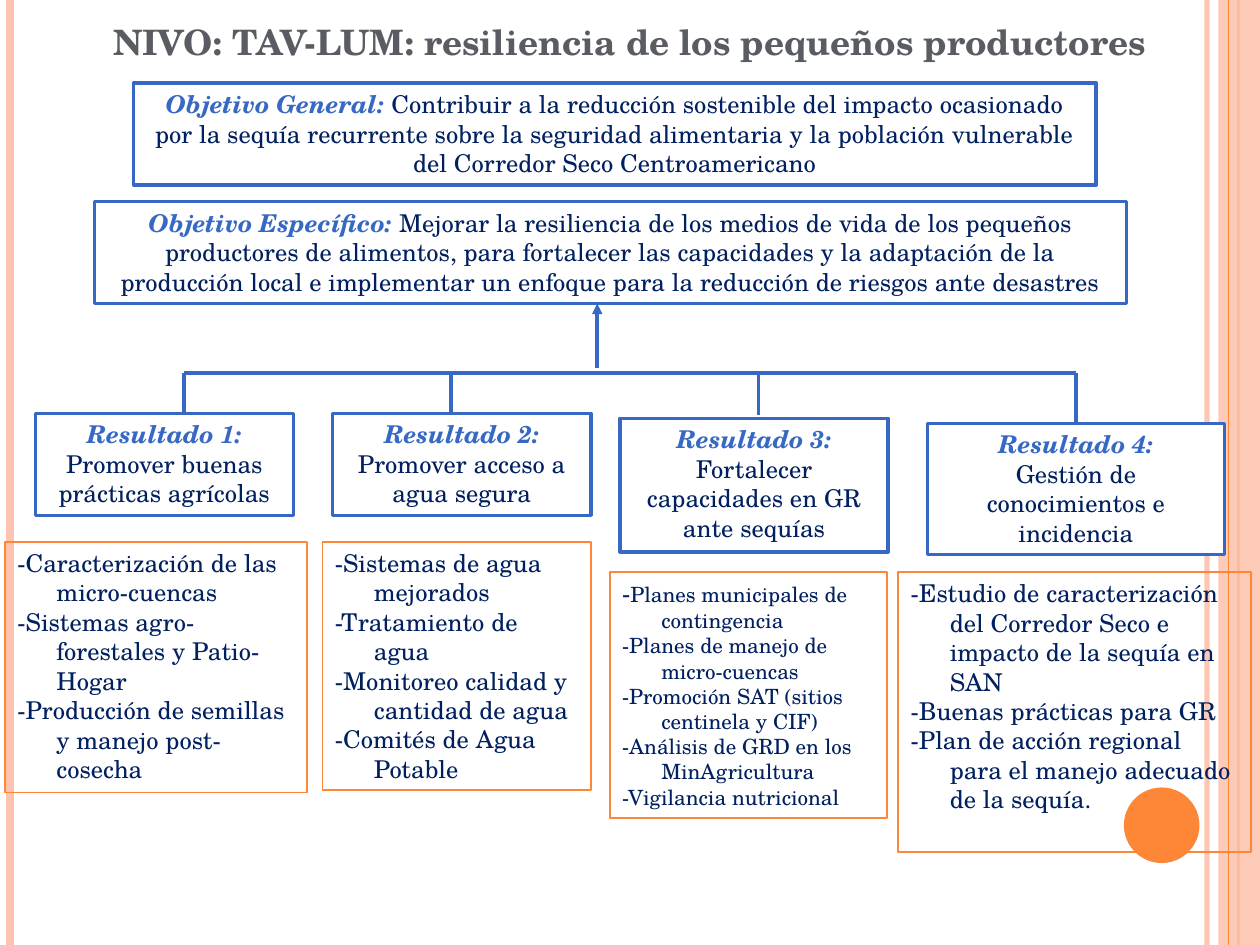
from lxml import etree
from pptx import Presentation
from pptx.dml.color import RGBColor
from pptx.enum.shapes import MSO_CONNECTOR, MSO_SHAPE
from pptx.enum.text import MSO_ANCHOR, MSO_AUTO_SIZE, PP_ALIGN
from pptx.oxml.ns import qn
from pptx.util import Inches, Pt

FONT = "TeX Gyre Schola"
BODY_SIZE = 14
COLORS = {
    "blue": "3668C4",
    "navy": "002060",
    "orange": "FE8637",
    "peach": "FEC3AE",
    "gray": "595D63",
    "white": "FFFFFF",
}
TITLE = "NIVO: TAV-LUM: resiliencia de los pequeños productores"
OBJECTIVES = [
    ((1.06, 0.66, 7.64, 0.81), "Objetivo General: ",
     "Contribuir a la reducción sostenible del impacto ocasionado por la sequía "
     "recurrente sobre la seguridad alimentaria y la población vulnerable del "
     "Corredor Seco Centroamericano"),
    ((0.75, 1.6, 8.19, 0.81), "Objetivo Específico: ",
     "Mejorar la resiliencia de los medios de vida de los pequeños productores de "
     "alimentos, para fortalecer las capacidades y la adaptación de la producción "
     "local e implementar un enfoque para la reducción de riesgos ante desastres"),
]
RESULTS = [
    ((0.28, 3.28, 2.05, 0.81), "Promover buenas prácticas agrícolas"),
    ((2.64, 3.28, 2.05, 0.81), "Promover acceso a agua segura"),
    ((4.92, 3.32, 2.13, 1.06), "Fortalecer capacidades en GR ante sequías"),
    ((7.36, 3.36, 2.36, 1.04), "Gestión de conocimientos e incidencia"),
]
ACTIVITIES = [
    ((0.04, 4.3, 2.4, 1.99), BODY_SIZE, [
        "-Caracterización de las micro-cuencas",
        "-Sistemas agro-forestales y Patio-Hogar",
        "-Producción de semillas y manejo post-cosecha"]),
    ((2.56, 4.3, 2.13, 1.97), BODY_SIZE, [
        "-Sistemas de agua mejorados",
        "-Tratamiento de agua",
        "-Monitoreo calidad y cantidad de agua",
        "-Comités de Agua Potable"]),
    ((4.84, 4.54, 2.2, 1.95), 12, [
        "-Planes municipales de contingencia",
        "-Planes de manejo de micro-cuencas",
        "-Promoción SAT (sitios centinela y CIF)",
        "-Análisis de GRD en los MinAgricultura",
        "-Vigilancia nutricional"]),
    ((7.13, 4.54, 2.8, 2.22), BODY_SIZE, [
        "-Estudio de caracterización del Corredor Seco e impacto de la sequía en SAN",
        "-Buenas prácticas para GR",
        "-Plan de acción regional para el manejo adecuado de la sequía."]),
]


def color(name):
    """Return the named palette colour."""
    return RGBColor.from_string(COLORS[name])


def set_opacity(element, percent):
    """Give the first colour inside an element an opacity."""
    color_element = next(element.iter(qn("a:srgbClr")))
    etree.SubElement(color_element, qn("a:alpha")).set("val", str(percent * 1000))


def set_indent(paragraph, inches):
    """Give a paragraph a hanging indent."""
    properties = paragraph._p.get_or_add_pPr()
    properties.set("marL", str(Inches(inches)))
    properties.set("indent", str(-Inches(inches)))


def format_run(run, size, color_name, bold=False, italic=False):
    """Set the font of a run."""
    font = run.font
    font.name, font.size = FONT, Pt(size)
    font.bold, font.italic = bold, italic
    font.color.rgb = color(color_name)


def add_line(slide, start, end, color_name, width):
    """Add a straight line without a shadow."""
    line = slide.shapes.add_connector(
        MSO_CONNECTOR.STRAIGHT, *[Inches(value) for value in (*start, *end)])
    line.line.color.rgb = color(color_name)
    line.line.width = Pt(width)
    etree.SubElement(line._element.spPr, qn("a:effectLst"))
    return line


def add_box(slide, box, fill=None, outline=None, width=2, kind=MSO_SHAPE.RECTANGLE):
    """Add a shape with top-anchored, wrapping text."""
    shape = slide.shapes.add_shape(kind, *[Inches(value) for value in box])
    shape.shadow.inherit = False
    if fill:
        shape.fill.solid()
        shape.fill.fore_color.rgb = color(fill)
    else:
        shape.fill.background()
    if outline:
        shape.line.color.rgb = color(outline)
        shape.line.width = Pt(width)
    else:
        shape.line.fill.background()
    shape.text_frame.word_wrap = True
    shape.text_frame.vertical_anchor = MSO_ANCHOR.TOP
    return shape


def add_decoration(slide, box):
    """Draw the side stripes and the disc."""
    left, top, width, height = box
    right, bottom = left + width, top + height

    def stripe(x, color_name, line_width):
        return add_line(slide, (x, top), (x, bottom), color_name, line_width)

    pale_stripe = stripe(right - 0.42, "peach", 3)
    set_opacity(pale_stripe._element.spPr, 93)
    stripe(left + 0.08, "peach", 4.5)
    stripe(right - 0.17, "orange", 1.5)
    band = add_box(slide, (right - 0.33, top, 0.33, height), fill="peach")
    set_opacity(band._element.spPr, 87)
    stripe(right - 0.25, "orange", 0.75)
    add_box(slide, (right - 1.08, bottom - 1.25, 0.6, 0.6), fill="orange",
            kind=MSO_SHAPE.OVAL)


def add_title(slide, box):
    """Place and format the title."""
    title = slide.shapes.title
    title.left, title.top, title.width, title.height = [Inches(value) for value in box]
    frame = title.text_frame
    frame.text = TITLE
    frame.word_wrap = True
    frame.auto_size = MSO_AUTO_SIZE.NONE
    frame.vertical_anchor = MSO_ANCHOR.TOP
    paragraph = frame.paragraphs[0]
    paragraph.alignment = PP_ALIGN.CENTER
    paragraph.space_before = Pt(6)
    set_indent(paragraph, 0.3)
    format_run(paragraph.runs[0], 20, "gray", bold=True)


def add_objective(slide, box, label, text):
    """Add an objective with its label on the same line."""
    shape = add_box(slide, box, outline="blue")
    paragraph = shape.text_frame.paragraphs[0]
    paragraph.text = label
    paragraph.alignment = PP_ALIGN.CENTER
    format_run(paragraph.runs[0], BODY_SIZE, "blue", bold=True, italic=True)
    run = paragraph.add_run()
    run.text = text
    format_run(run, BODY_SIZE, "navy")


def add_result(slide, box, number, text):
    """Add a result with its label on a line of its own."""
    shape = add_box(slide, box, fill="white", outline="blue")
    shape.text_frame.text = f"Resultado {number}:\n{text}"
    label, body = shape.text_frame.paragraphs
    label.alignment = body.alignment = PP_ALIGN.CENTER
    format_run(label.runs[0], BODY_SIZE, "blue", bold=True, italic=True)
    format_run(body.runs[0], BODY_SIZE, "navy")
    return shape


def add_activities(slide, box, size, items):
    """Add a list of activities whose first dash keeps the body size."""
    shape = add_box(slide, box, outline="orange", width=1)
    shape.text_frame.text = "\n".join(items)
    for paragraph in shape.text_frame.paragraphs:
        paragraph.alignment = PP_ALIGN.LEFT
        set_indent(paragraph, 0.31)
        format_run(paragraph.runs[0], size, "navy")
    if size != BODY_SIZE:
        first = shape.text_frame.paragraphs[0]
        first.runs[0].text = items[0][0]
        format_run(first.runs[0], BODY_SIZE, "navy")
        rest = first.add_run()
        rest.text = items[0][1:]
        format_run(rest, size, "navy")


def add_tree(slide, box, last_result):
    """Draw the lines from the results up to the specific objective."""
    left, top, width, height = box
    right, bar = left + width, top + 0.55
    arrow = add_line(slide, (left + 3.28, bar - 0.04), (left + 3.28, top), "blue", 2)
    etree.SubElement(arrow.line._get_or_add_ln(), qn("a:tailEnd")).set("type", "triangle")
    add_line(slide, (left, bar), (right, bar), "blue", 2)
    for x in (left, left + 2.12, left + 4.56):
        add_line(slide, (x, bar), (x, top + height), "blue", 2)
    branch = add_line(slide, (right, bar), (right, top + 0.95), "blue", 2)
    branch.end_connect(last_result, 0)


def main():
    """Build and save the slide."""
    presentation = Presentation()
    presentation.slide_width, presentation.slide_height = Inches(10), Inches(7.5)
    slide = presentation.slides.add_slide(presentation.slide_layouts[5])
    add_decoration(slide, (0, 0, 10, 7.5))
    add_title(slide, (0, 0.11, 10, 0.55))
    for objective in OBJECTIVES:
        add_objective(slide, *objective)
    results = [add_result(slide, box, number, text)
               for number, (box, text) in enumerate(RESULTS, 1)]
    add_tree(slide, (1.46, 2.41, 7.08, 0.88), results[-1])
    for activities in ACTIVITIES:
        add_activities(slide, *activities)
    presentation.save("out.pptx")


if __name__ == "__main__":
    main()
